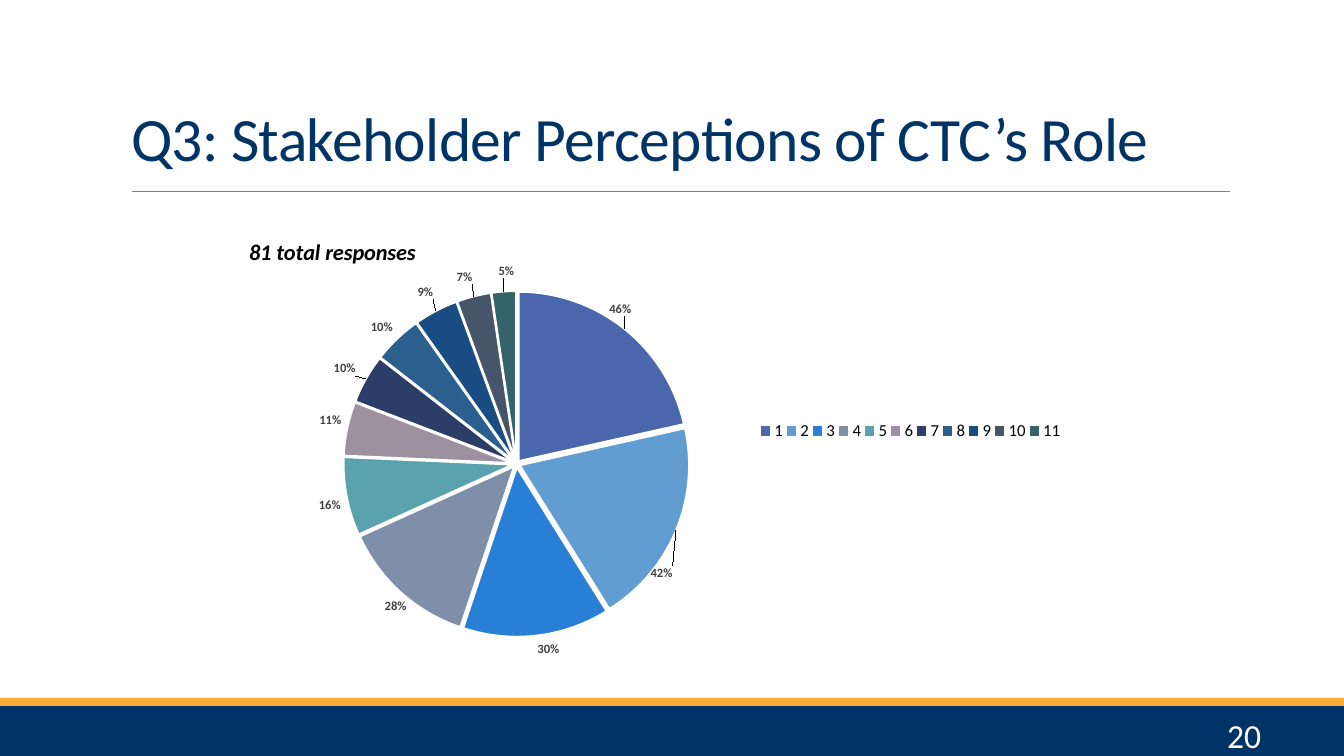
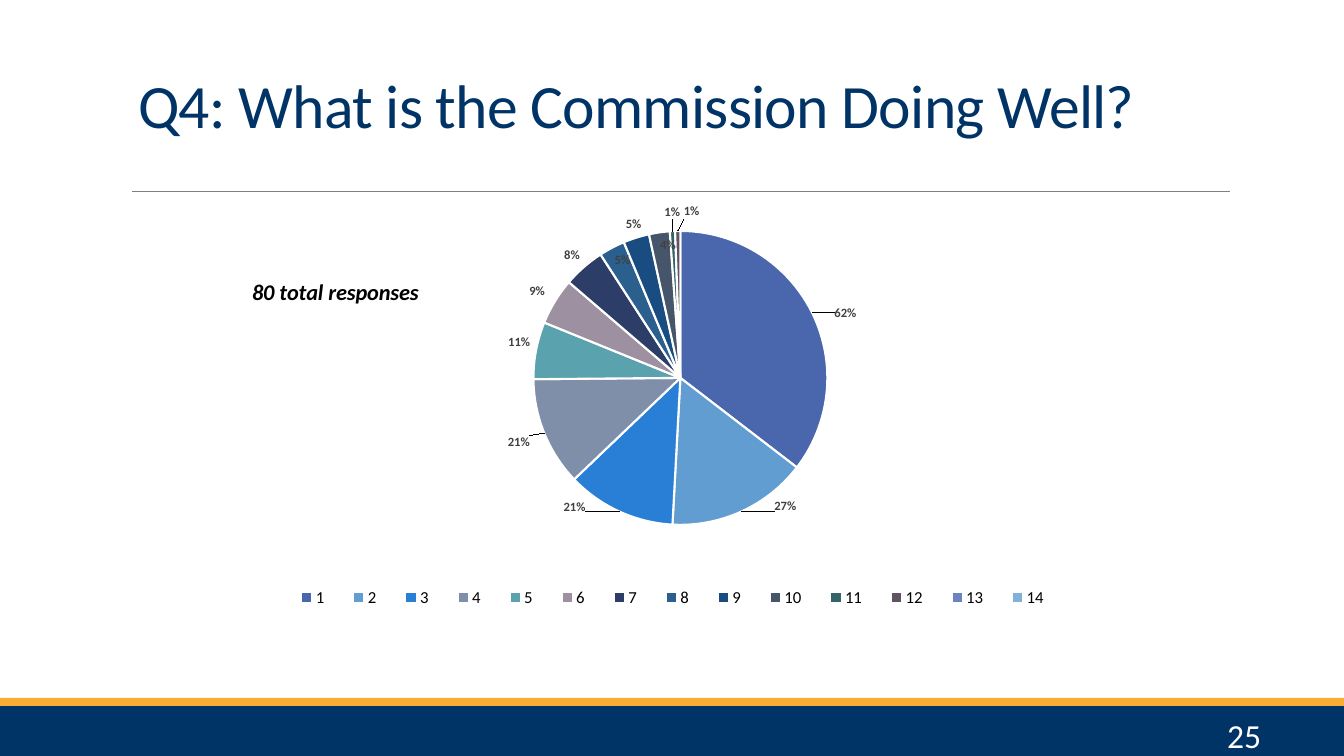
from lxml import etree
from pptx import Presentation
from pptx.chart.data import CategoryChartData
from pptx.dml.color import RGBColor
from pptx.enum.chart import XL_CHART_TYPE, XL_LABEL_POSITION, XL_LEGEND_POSITION
from pptx.enum.shapes import MSO_CONNECTOR, MSO_SHAPE
from pptx.enum.text import MSO_ANCHOR, MSO_AUTO_SIZE, PP_ALIGN
from pptx.oxml.ns import qn
from pptx.util import Emu, Pt

PIE = XL_CHART_TYPE.PIE
OUTSIDE, INSIDE = XL_LABEL_POSITION.OUTSIDE_END, XL_LABEL_POSITION.INSIDE_END
LEGEND_RIGHT, LEGEND_BOTTOM = XL_LEGEND_POSITION.RIGHT, XL_LEGEND_POSITION.BOTTOM
RECTANGLE, STRAIGHT = MSO_SHAPE.RECTANGLE, MSO_CONNECTOR.STRAIGHT
BOTTOM, MIDDLE = MSO_ANCHOR.BOTTOM, MSO_ANCHOR.MIDDLE
LEFT, RIGHT = PP_ALIGN.LEFT, PP_ALIGN.RIGHT
NO_AUTOFIT = MSO_AUTO_SIZE.NONE

PX_PER_INCH = 100.8
WIDTH, HEIGHT = 1344, 756
FONT = "Calibri"
PERCENT = "0%;;"
TITLE_ONLY = 5
COLORS = {
    "navy": "003366", "gold": "FAAC35", "rule": "808080",
    "white": "FFFFFF", "black": "000000", "label": "404040",
}
SLICES = {
    "indigo": "4A66AC", "sky": "629DD1", "blue": "297FD5", "slate": "7F8FA9",
    "teal": "5AA2AE", "mauve": "9D90A0", "midnight": "2C3D67",
    "steel": "2A5F8E", "ocean": "194C80", "charcoal": "47556A",
    "pine": "34636A", "plum": "605462", "periwinkle": "6B83BF",
    "pale": "81B1DA",
}

SLIDES = [
    {
        "title": "Q3: Stakeholder Perceptions of CTC’s Role",
        "title_box": (121, 22, 1109, 157),
        "number": "20",
        "chart_box": (230, 196, 863, 481),
        "caption": "81 total responses",
        "caption_at": (15, 37),
        "plot_box": (91, 95, 391, 346),
        "legend": LEGEND_RIGHT,
        "legend_box": (527, 224, 307, 22),
        "explosion": 2,
        "values": [0.46, 0.42, 0.3, 0.28, 0.16, 0.11, 0.1, 0.1, 0.09, 0.07, 0.05],
        "moved_labels": {0: (-19, -8), 1: (-31, 33), 3: (10, 2), 6: (-5, 0),
                         8: (0, -6), 9: (0, -6), 10: (3, -7)},
        "inside_labels": [],
    },
    {
        "title": "Q4: What is the Commission Doing Well?",
        "title_box": (128, -11, 1109, 157),
        "number": "25",
        "chart_box": (188, 147, 933, 515),
        "caption": "80 total responses",
        "caption_at": (60, 126),
        "plot_box": (315, 84, 355, 294),
        "legend": LEGEND_BOTTOM,
        "legend_box": (90, 437, 790, 27),
        "explosion": 0,
        "values": [0.62, 0.27, 0.21, 0.21, 0.11, 0.09, 0.08, 0.05, 0.05, 0.04,
                   0.01, 0.01, 0, 0],
        "moved_labels": {0: (17, 10), 1: (30, -18), 2: (-31, -17), 3: (-9, 0),
                         5: (-5, 0), 8: (7, 0), 10: (0, -6), 11: (14, -6)},
        "inside_labels": [7, 9],
    },
]


def px(*lengths):
    """Turn pixel lengths into EMU."""
    return [Emu(round(length * 914400 / PX_PER_INCH)) for length in lengths]


def style_font(font, size, color, bold=None, italic=None):
    """Give a font the deck's face and the stated look."""
    font.name, font.size = FONT, Pt(size)
    font.bold, font.italic = bold, italic
    font.color.rgb = RGBColor.from_string(color)


def add_band(slide, box, color):
    """Draw a plain filled band."""
    band = slide.shapes.add_shape(RECTANGLE, *px(*box))
    band.shadow.inherit = False
    band.fill.solid()
    band.fill.fore_color.rgb = RGBColor.from_string(color)
    band.line.fill.background()


def add_frame(slide, number):
    """Draw the title rule, footer bands and slide number."""
    add_band(slide, (0, 706, WIDTH, HEIGHT - 706), COLORS["navy"])
    add_band(slide, (0, 698, WIDTH, 8), COLORS["gold"])
    rule = slide.shapes.add_connector(STRAIGHT, *px(132, 191, 1230, 191))
    rule.line.color.rgb = RGBColor.from_string(COLORS["rule"])
    rule.line.width = Pt(0.5)
    etree.SubElement(rule._element.spPr, qn("a:effectLst"))
    frame = slide.shapes.add_textbox(*px(26, 714, 1245, 42)).text_frame
    frame.word_wrap = True
    frame.vertical_anchor = MIDDLE
    paragraph = frame.paragraphs[0]
    paragraph.text = number
    paragraph.alignment = RIGHT
    style_font(paragraph.runs[0].font, 24, COLORS["white"])


def set_title(slide, text, box):
    """Move, fill and format the title placeholder."""
    title = slide.shapes.title
    title.left, title.top, title.width, title.height = px(*box)
    frame = title.text_frame
    frame.text = text
    frame.word_wrap = True
    frame.auto_size = NO_AUTOFIT
    frame.vertical_anchor = BOTTOM
    paragraph = frame.paragraphs[0]
    paragraph.alignment = LEFT
    paragraph.line_spacing = 0.85
    run = paragraph.runs[0]
    style_font(run.font, 44, COLORS["navy"])
    run.font._element.set("spc", "-50")


def set_layout(parent, index, chart_box, place, edge=True, inner=False):
    """Place a chart part by pixels within the chart box."""
    for old_layout in parent.findall(qn("c:layout")):
        parent.remove(old_layout)
    layout = etree.Element(qn("c:layout"))
    manual = etree.SubElement(layout, qn("c:manualLayout"))
    settings = [("layoutTarget", "inner")] if inner else []
    if edge:
        settings += [("xMode", "edge"), ("yMode", "edge")]
    spans = chart_box[2:] * 2
    settings += [(name, f"{length / span:.4f}")
                 for name, length, span in zip("xywh", place, spans)]
    for name, value in settings:
        etree.SubElement(manual, qn(f"c:{name}")).set("val", value)
    parent.insert(index, layout)


def style_slices(series, explosion):
    """Colour, outline and separate the slices."""
    for index, color in zip(range(len(series.values)), SLICES.values()):
        slice_format = series.points[index].format
        slice_format.fill.solid()
        slice_format.fill.fore_color.rgb = RGBColor.from_string(color)
        slice_format.line.color.rgb = RGBColor.from_string(COLORS["white"])
        slice_format.line.width = Pt(1.5)
    if explosion:
        element = etree.Element(qn("c:explosion"))
        element.set("val", str(explosion))
        series._element.find(qn("c:dPt")).addprevious(element)


def style_labels(series, content):
    """Show the values and shift the labels that need room."""
    labels = series.data_labels
    labels.show_value = True
    labels.number_format, labels.number_format_is_linked = PERCENT, False
    labels.position = OUTSIDE
    style_font(labels.font, 9, COLORS["label"], bold=True)
    moved, inside = content["moved_labels"], content["inside_labels"]
    for index in sorted([*moved, *inside]):
        label = series.points[index].data_label
        style_font(label.font, 9, COLORS["label"], bold=True)
        label.position = INSIDE if index in inside else OUTSIDE
    for element in series._element.iter(qn("c:dLbl")):
        index = int(element.find(qn("c:idx")).get("val"))
        if index in moved:
            set_layout(element, 1, content["chart_box"], moved[index], edge=False)


def add_pie(slide, content):
    """Draw the response pie with its caption and legend."""
    box, values = content["chart_box"], content["values"]
    data = CategoryChartData(number_format=PERCENT)
    data.categories = [str(number + 1) for number in range(len(values))]
    data.add_series("Series 1", values)
    chart = slide.shapes.add_chart(PIE, *px(*box), data).chart
    style_font(chart.font, 10, COLORS["black"])

    chart.has_title = True
    paragraph = chart.chart_title.text_frame.paragraphs[0]
    paragraph.text = content["caption"]
    style_font(paragraph.runs[0].font, 16, COLORS["black"], bold=True, italic=True)
    set_layout(chart.chart_title.element, 1, box, content["caption_at"])

    chart.has_legend = True
    chart.legend.position = content["legend"]
    chart.legend.include_in_layout = False
    style_font(chart.legend.font, 12, COLORS["black"])
    set_layout(chart.legend._element, 1, box, content["legend_box"])

    plot = chart.plots[0]
    plot.vary_by_categories = True
    set_layout(plot._element.getparent(), 0, box, content["plot_box"], inner=True)
    style_slices(plot.series[0], content["explosion"])
    style_labels(plot.series[0], content)


def add_survey_slide(presentation, content):
    """Build one survey question slide."""
    slide = presentation.slides.add_slide(presentation.slide_layouts[TITLE_ONLY])
    add_frame(slide, content["number"])
    set_title(slide, content["title"], content["title_box"])
    add_pie(slide, content)


def main():
    """Build and save the presentation."""
    presentation = Presentation()
    presentation.slide_width, presentation.slide_height = px(WIDTH, HEIGHT)
    for content in SLIDES:
        add_survey_slide(presentation, content)
    presentation.save("out.pptx")


if __name__ == "__main__":
    main()
